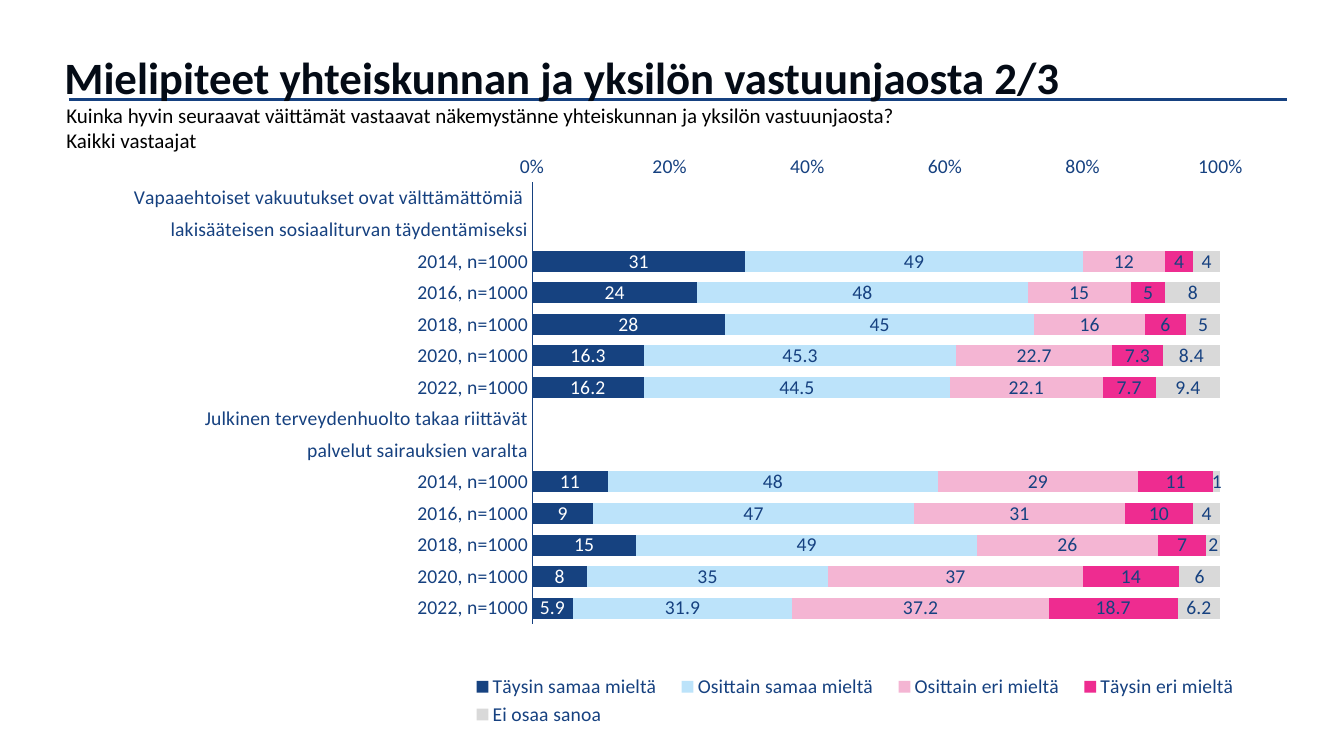
"""Build a slide with a stacked bar chart of opinions on sharing responsibility."""
from lxml import etree
from pptx import Presentation
from pptx.chart.data import CategoryChartData
from pptx.dml.color import RGBColor
from pptx.enum.chart import XL_AXIS_CROSSES as Crosses
from pptx.enum.chart import XL_CHART_TYPE as ChartType
from pptx.enum.chart import XL_LABEL_POSITION as LabelPosition
from pptx.enum.chart import XL_LEGEND_POSITION as LegendPosition
from pptx.enum.chart import XL_TICK_MARK as TickMark
from pptx.enum.shapes import MSO_CONNECTOR as Connector
from pptx.oxml.ns import qn
from pptx.util import Inches, Pt

NAVY = RGBColor(0x16, 0x41, 0x80)
INK = RGBColor(0x04, 0x0B, 0x16)
BLACK = RGBColor(0, 0, 0)
WHITE = RGBColor(0xFF, 0xFF, 0xFF)
DARK_BLUE = RGBColor(0x16, 0x42, 0x80)
LIGHT_BLUE = RGBColor(0xBC, 0xE3, 0xFA)
LIGHT_PINK = RGBColor(0xF4, 0xB5, 0xD3)
PINK = RGBColor(0xEE, 0x2C, 0x90)
GREY = RGBColor(0xD9, 0xD9, 0xD9)
FONT = "Calibri"

YEARS = [f"{year}, n=1000" for year in range(2014, 2023, 2)]
INSURANCE = ["Vapaaehtoiset vakuutukset ovat välttämättömiä ",
             "lakisääteisen sosiaaliturvan täydentämiseksi"]
HEALTHCARE = ["Julkinen terveydenhuolto takaa riittävät",
              "palvelut sairauksien varalta"]
ANSWERS = [
    ("Täysin samaa mieltä", DARK_BLUE, WHITE,
     [31, 24, 28, 16.3, 16.2], [11, 9, 15, 8, 5.9]),
    ("Osittain samaa mieltä", LIGHT_BLUE, NAVY,
     [49, 48, 45, 45.3, 44.5], [48, 47, 49, 35, 31.9]),
    ("Osittain eri mieltä", LIGHT_PINK, NAVY,
     [12, 15, 16, 22.7, 22.1], [29, 31, 26, 37, 37.2]),
    ("Täysin eri mieltä", PINK, NAVY,
     [4, 5, 6, 7.3, 7.7], [11, 10, 7, 14, 18.7]),
    ("Ei osaa sanoa", GREY, NAVY,
     [4, 8, 5, 8.4, 9.4], [1, 4, 2, 6, 6.2]),
]


def add_text(slide, left, top, width, height, lines, size, color, bold=False):
    """Add a wrapped text box with one paragraph per line."""
    box = slide.shapes.add_textbox(Inches(left), Inches(top), Inches(width), Inches(height))
    frame = box.text_frame
    frame.word_wrap = True
    frame.text = "\n".join(lines)
    for paragraph in frame.paragraphs:
        font = paragraph.font
        font.name, font.size, font.bold = FONT, Pt(size), bold
        font.color.rgb = color


def set_layout(parent, position, inner=False):
    """Fix the place of a chart part as fractions of the chart."""
    for old_layout in parent.findall(qn("c:layout")):
        parent.remove(old_layout)
    layout = etree.Element(qn("c:layout"))
    manual = etree.SubElement(layout, qn("c:manualLayout"))
    settings = [("layoutTarget", "inner")] if inner else []
    settings += [("xMode", "edge"), ("yMode", "edge")]
    settings += zip("xywh", map(str, position))
    for name, value in settings:
        etree.SubElement(manual, qn(f"c:{name}")).set("val", value)
    parent.insert(0 if inner else 1, layout)


presentation = Presentation()
presentation.slide_width = Inches(13.33)
presentation.slide_height = Inches(7.5)
slide = presentation.slides.add_slide(presentation.slide_layouts[6])

chart_data = CategoryChartData()
chart_data.categories = INSURANCE + YEARS + HEALTHCARE + YEARS
for name, _, _, insurance, healthcare in ANSWERS:
    chart_data.add_series(name, [None, None, *insurance, None, None, *healthcare])
chart = slide.shapes.add_chart(
    ChartType.BAR_STACKED_100, Inches(-0.71), Inches(1.49),
    Inches(13.13), Inches(5.81), chart_data).chart
chart.has_title = False
chart.font.name = FONT
chart.font.size = Pt(14)
chart.font.color.rgb = NAVY

plot = chart.plots[0]
plot.gap_width = 50
plot.overlap = 100
plot.vary_by_categories = False
for series, (_, fill_color, label_color, _, _) in zip(plot.series, ANSWERS):
    series.format.fill.solid()
    series.format.fill.fore_color.rgb = fill_color
    labels = series.data_labels
    labels.show_value = True
    labels.position = LabelPosition.CENTER
    labels.font.name = FONT
    labels.font.size = Pt(14)
    labels.font.color.rgb = label_color

category_axis = chart.category_axis
category_axis.reverse_order = True
category_axis.major_tick_mark = TickMark.NONE
category_axis.crosses = Crosses.MAXIMUM
category_axis.format.line.color.rgb = NAVY
category_axis.format.line.width = Pt(0.5)

value_axis = chart.value_axis
value_axis.minimum_scale = 0
value_axis.maximum_scale = 1
value_axis.major_unit = 0.2
value_axis.major_tick_mark = TickMark.NONE
value_axis.has_major_gridlines = False
value_axis.format.line.fill.background()
value_axis.tick_labels.number_format = "0%"
value_axis.tick_labels.number_format_is_linked = False

chart.has_legend = True
legend = chart.legend
legend.position = LegendPosition.BOTTOM
legend.include_in_layout = False
plot_area = chart.element.find(".//" + qn("c:plotArea"))
set_layout(plot_area, (0.456, 0.055, 0.52, 0.754), inner=True)
set_layout(chart.element.find(".//" + qn("c:legend")), (0.4, 0.89, 0.6, 0.1))

title_rule = slide.shapes.add_connector(
    Connector.STRAIGHT, Inches(0.68), Inches(0.99), Inches(12.76), Inches(0.99))
title_rule.line.color.rgb = NAVY
title_rule.line.width = Pt(2.25)
etree.SubElement(title_rule.element.spPr, qn("a:effectLst"))

add_text(slide, 0.54, 0.44, 10.53, 1.18,
         ["Mielipiteet yhteiskunnan ja yksilön vastuunjaosta 2/3"], 32, INK, bold=True)
add_text(slide, 0.56, 0.97, 10.05, 0.61,
         ["Kuinka hyvin seuraavat väittämät vastaavat näkemystänne "
          "yhteiskunnan ja yksilön vastuunjaosta?", "Kaikki vastaajat"], 15, BLACK)

presentation.save("out.pptx")
